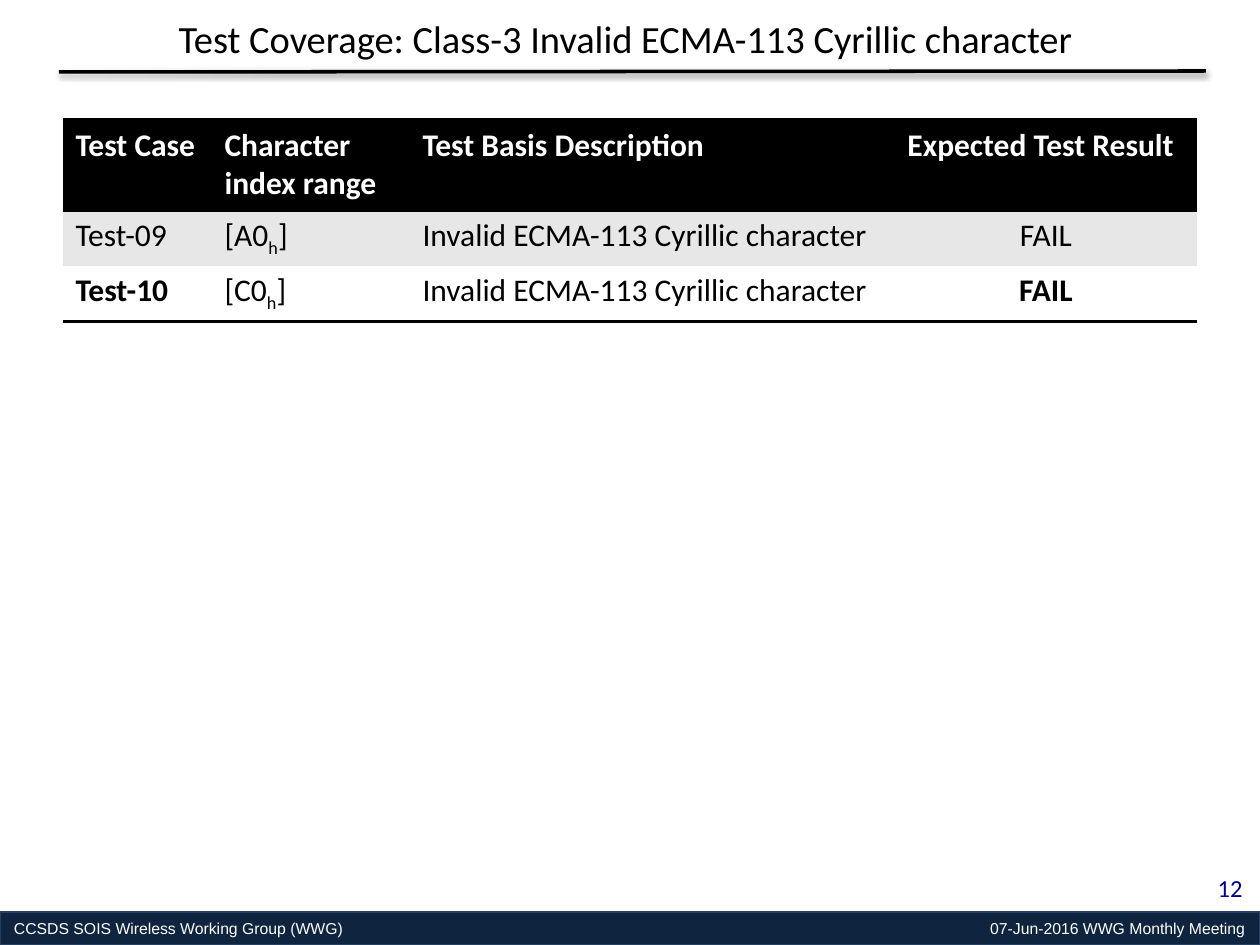
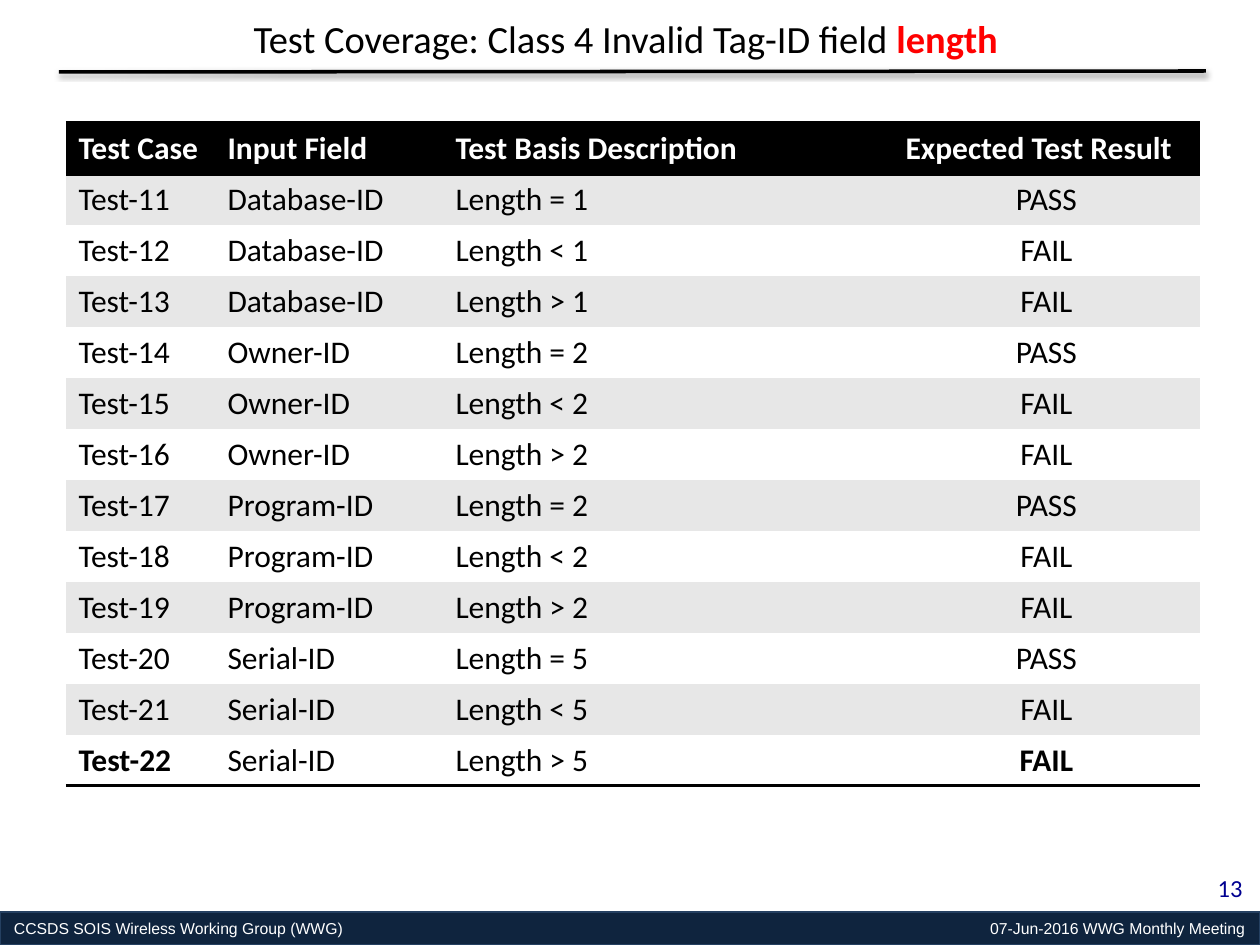
from itertools import product
from lxml import etree
from pptx import Presentation
from pptx.dml.color import RGBColor
from pptx.enum.shapes import MSO_CONNECTOR as CONNECTOR, MSO_SHAPE as SHAPE
from pptx.enum.text import MSO_ANCHOR as ANCHOR, PP_ALIGN as ALIGN
from pptx.oxml import parse_xml
from pptx.oxml.ns import nsdecls, qn
from pptx.util import Pt

# Content: a text is a list of (words, style) runs
FOOTER = ("CCSDS SOIS Wireless Working Group (WWG)", "07-Jun-2016 WWG Monthly Meeting")
SUB = {"baseline": -25000}
ALERT = {"color": "FF0000", "bold": True}

INVALID = "Invalid ECMA-113 Cyrillic character"
FIELDS = [("Database-ID", 1), ("Owner-ID", 2), ("Program-ID", 2), ("Serial-ID", 5)]
CHECKS = [("=", "PASS"), ("<", "FAIL"), (">", "FAIL")]


def plain(words):
    return [(words, {})]


def hex_index(digits):
    return [("[" + digits, {}), ("h", SUB), ("]", {})]


CHARACTER_TESTS = [
    (plain(f"Test-{case:02}"), hex_index(digits), plain(INVALID), plain("FAIL"))
    for case, digits in enumerate(["A0", "C0"], 9)
]
LENGTH_TESTS = [
    (plain(f"Test-{case}"), plain(field), plain(f"Length {sign} {size}"), plain(result))
    for case, ((field, size), (sign, result)) in enumerate(product(FIELDS, CHECKS), 11)
]

SLIDES = [
    {
        "number": 12,
        "title": [("Test Coverage: Class-3 Invalid ECMA-113 Cyrillic character ", {})],
        "second_heading": "Character index range",
        "tests": CHARACTER_TESTS,
        "corner": (63, 120), "columns": (149, 198, 485, 302),
        "header_height": 90, "test_height": 54,
    },
    {
        "number": 13,
        "title": [("Test Coverage: Class 4 Invalid Tag-ID field ", {}), ("length ", ALERT)],
        "second_heading": "Input Field",
        "tests": LENGTH_TESTS,
        "corner": (66, 123), "columns": (149, 228, 450, 307),
        "header_height": 51, "test_height": 51,
    },
]

# Shared look
BLACK, WHITE, BAND = "000000", "FFFFFF", "E7E7E7"
NAVY, NAVY_EDGE, NUMBER_BLUE = "0F243E", "254061", "000090"
NO_STYLE = "{2D5ABB26-0587-4C30-8999-92F81FD0307C}"
WIDTH, HEIGHT = 1260, 945
FOOTER_TOP, FOOTER_INSET = 912, 14
EMU_PER_PX = 914400 // 126


def px(length):
    return length * EMU_PER_PX


def rgb(color):
    return RGBColor.from_string(color)


def write(paragraph, runs, size, color=BLACK, bold=False, font="Calibri", align=ALIGN.LEFT):
    paragraph.alignment = align
    for words, style in runs:
        run = paragraph.add_run()
        run.text = words
        run.font.name, run.font.size = font, Pt(size)
        run.font.bold = style.get("bold", bold)
        run.font.color.rgb = rgb(style.get("color", color))
        if "baseline" in style:
            run.font._element.set("baseline", str(style["baseline"]))


def add_text(slide, box, runs, size, anchor=ANCHOR.TOP, **look):
    frame = slide.shapes.add_textbox(*map(px, box)).text_frame
    frame.word_wrap = True
    frame.vertical_anchor = anchor
    write(frame.paragraphs[0], runs, size, **look)


def add_footer(slide):
    band = slide.shapes.add_shape(
        SHAPE.RECTANGLE, 0, px(FOOTER_TOP), px(WIDTH), px(HEIGHT - FOOTER_TOP))
    band.shadow.inherit = False
    band.fill.solid()
    band.fill.fore_color.rgb = rgb(NAVY)
    band.line.color.rgb = rgb(NAVY_EDGE)
    band.line.width = Pt(0.75)
    frame = band.text_frame
    frame.margin_left = frame.margin_right = px(FOOTER_INSET)
    frame.margin_top = frame.margin_bottom = 0
    frame.vertical_anchor = ANCHOR.MIDDLE
    line = frame.paragraphs[0]
    write(line, plain("\t".join(FOOTER)), 9, WHITE, font="Arial")
    # A right tab holds the meeting date at the far edge
    stops = etree.SubElement(line._p.get_or_add_pPr(), qn("a:tabLst"))
    etree.SubElement(stops, qn("a:tab"), pos=str(px(WIDTH - 2 * FOOTER_INSET - 1)), algn="r")


def add_title(slide, title):
    add_text(slide, (63, 10, 1134, 57), title, 22, ANCHOR.MIDDLE, align=ALIGN.CENTER)
    rule = slide.shapes.add_connector(CONNECTOR.STRAIGHT, *map(px, (59, 72, 1206, 71)))
    rule.line.color.rgb = rgb(BLACK)
    rule.line.width = Pt(2)
    rule._element.spPr.append(parse_xml(
        f'<a:effectLst {nsdecls("a")}><a:outerShdw blurRad="40000" dist="20000" '
        f'dir="5400000" rotWithShape="0"><a:srgbClr val="{BLACK}"><a:alpha val="38000"/>'
        '</a:srgbClr></a:outerShdw></a:effectLst>'))


def add_border(cell, side):
    cell._tc.get_or_add_tcPr().append(parse_xml(
        f'<a:{side} {nsdecls("a")} w="{Pt(2)}"><a:solidFill><a:srgbClr val="{BLACK}"/>'
        f'</a:solidFill></a:{side}>'))


def add_tests(slide, content):
    headings = ("Test Case", content["second_heading"],
                "Test Basis Description", "Expected Test Result")
    rows = [[plain(heading) for heading in headings], *content["tests"]]
    heights = [content["header_height"]] + [content["test_height"]] * len(content["tests"])
    columns = content["columns"]
    last_row, last_column = len(rows) - 1, len(columns) - 1
    holder = slide.shapes.add_table(
        len(rows), len(columns), *map(px, (*content["corner"], sum(columns), sum(heights))))
    table = holder.table
    table.horz_banding = False
    for style in holder._element.iter(qn("a:tableStyleId")):
        style.text = NO_STYLE
    for column, width in zip(table.columns, columns):
        column.width = px(width)
    for r, (row, height) in enumerate(zip(rows, heights)):
        table.rows[r].height = px(height)
        header = r == 0
        for c, runs in enumerate(row):
            cell = table.cell(r, c)
            # Borders go in ahead of the fill
            if header:
                add_border(cell, "lnT")
            if header or r == last_row:
                add_border(cell, "lnB")
            cell.fill.solid()
            cell.fill.fore_color.rgb = rgb(BLACK if header else BAND if r % 2 else WHITE)
            closing = r == last_row and c in (0, last_column)
            centred = c == last_column and not header
            write(cell.text_frame.paragraphs[0], runs, 18, WHITE if header else BLACK,
                  bold=header or closing, align=ALIGN.CENTER if centred else ALIGN.LEFT)


def main():
    deck = Presentation()
    deck.slide_width, deck.slide_height = px(WIDTH), px(HEIGHT)
    for content in SLIDES:
        slide = deck.slides.add_slide(deck.slide_layouts[6])
        add_footer(slide)
        add_text(slide, (1172, 867, 83, 44), plain(str(content["number"])), 14,
                 color=NUMBER_BLUE, align=ALIGN.RIGHT)
        add_title(slide, content["title"])
        add_tests(slide, content)
    deck.save("out.pptx")


if __name__ == "__main__":
    main()
